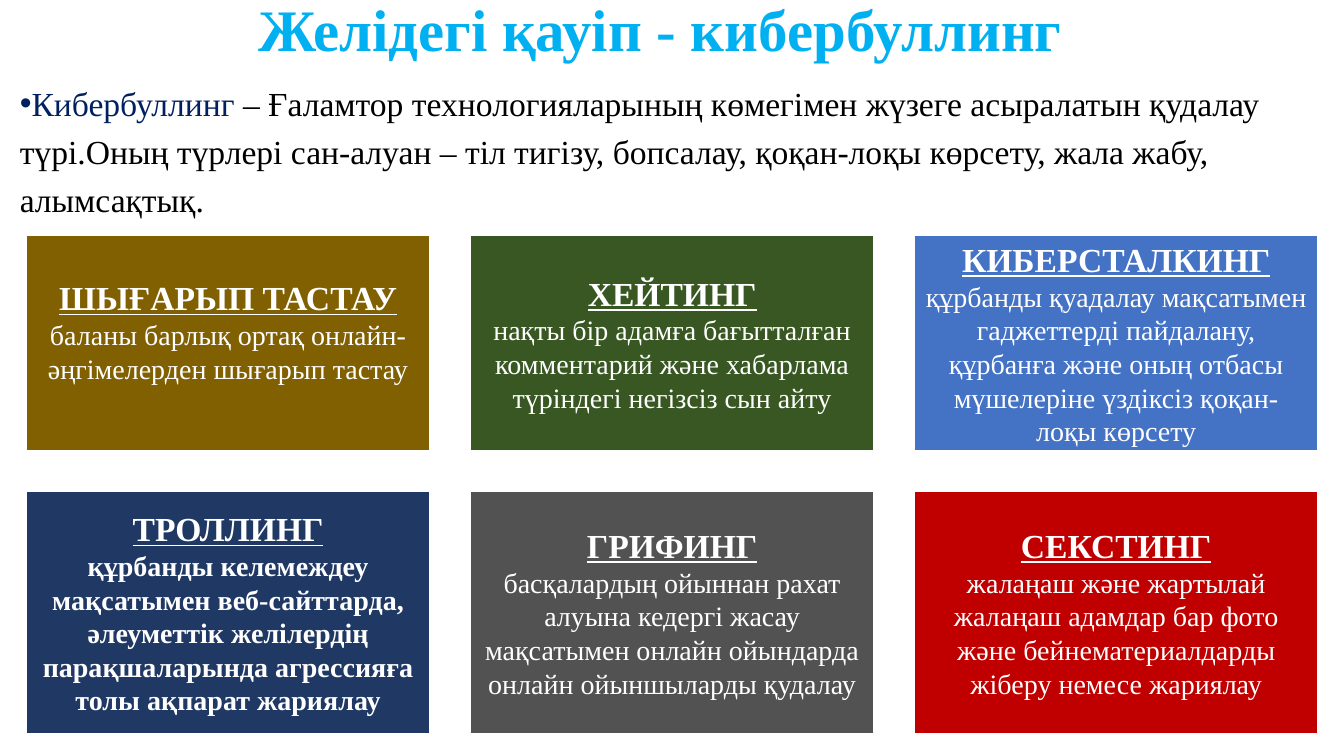
from dataclasses import dataclass

from lxml import etree
from pptx import Presentation
from pptx.dml.color import RGBColor
from pptx.enum import shapes, text
from pptx.oxml import ns
from pptx.util import Cm, Pt


@dataclass(frozen=True)
class Theme:
    font: str = "Times New Roman"
    heading: str = "00B0F0"
    term: str = "002060"
    body: str = "000000"
    white: str = "FFFFFF"
    heading_size: int = 42
    lead_size: int = 24
    card_size: int = 20


THEME = Theme()


def style(font, size, color, bold=False, underline=False):
    font.name = THEME.font
    font.size = Pt(size)
    font.bold = bold
    font.underline = underline
    font.color.rgb = RGBColor.from_string(color)


def set_insets(frame, inset):
    """Wrap the text inside equal margins on all four sides."""
    frame.word_wrap = True
    frame.margin_left = frame.margin_right = Cm(inset)
    frame.margin_top = frame.margin_bottom = Cm(inset)


prs = Presentation()
prs.slide_width, prs.slide_height = Cm(33.87), Cm(19.05)
slide = prs.slides.add_slide(prs.slide_layouts[5])

# Heading
title = slide.shapes.title
title.left, title.top, title.width, title.height = Cm(4.95), Cm(0.23), Cm(23.37), Cm(1.17)
title.text_frame.text = "Желідегі қауіп - кибербуллинг"
title.text_frame.auto_size = text.MSO_AUTO_SIZE.NONE
title.text_frame.vertical_anchor = text.MSO_ANCHOR.MIDDLE
heading = title.text_frame.paragraphs[0]
heading.alignment = text.PP_ALIGN.CENTER
heading.line_spacing = 0.9
style(heading.font, THEME.heading_size, THEME.heading, bold=True)

# Definition
definition = slide.shapes.add_textbox(Cm(0.25), Cm(1.75), Cm(33.6), Cm(2.16)).text_frame
set_insets(definition, 0.25)
definition.margin_top = Cm(0.13)
lead = definition.paragraphs[0]
lead.line_spacing = 1.2
for words, color in [
    ("Кибербуллинг", THEME.term),
    (" – Ғаламтор технологияларының көмегімен жүзеге асыралатын қудалау түрі."
     "Оның түрлері сан-алуан – тіл тигізу, бопсалау, қоқан-лоқы көрсету, "
     "жала жабу, алымсақтық.", THEME.body),
]:
    run = lead.add_run()
    run.text = words
    style(run.font, THEME.lead_size, color)
lead_properties = lead._p.get_or_add_pPr()
lead_properties.set("marL", "0")
lead_properties.set("indent", "0")
etree.SubElement(lead_properties, ns.qn("a:buFont"), typeface="Arial")
etree.SubElement(lead_properties, ns.qn("a:buChar"), char="•")

# Kinds of cyberbullying: fill, name, description, bold description, inset
kinds = [
    ("806000", "ШЫҒАРЫП ТАСТАУ",
     "баланы барлық ортақ онлайн-әңгімелерден шығарып тастау", False, 0.25),
    ("385723", "ХЕЙТИНГ",
     "нақты бір адамға бағытталған комментарий және хабарлама түріндегі "
     "негізсіз сын айту", False, 0.25),
    ("4472C4", "КИБЕРСТАЛКИНГ",
     "құрбанды қуадалау мақсатымен гаджеттерді пайдалану, құрбанға және оның "
     "отбасы мүшелеріне үздіксіз қоқан-лоқы көрсету", False, 0.25),
    ("203864", "ТРОЛЛИНГ",
     "құрбанды келемеждеу мақсатымен веб-сайттарда, әлеуметтік желілердің "
     "парақшаларында агрессияға толы ақпарат жариялау", True, 0.18),
    ("525252", "ГРИФИНГ",
     "басқалардың ойыннан рахат алуына кедергі жасау мақсатымен онлайн "
     "ойындарда онлайн ойыншыларды қудалау", False, 0.25),
    ("C00000", "СЕКСТИНГ",
     "жалаңаш және жартылай жалаңаш адамдар бар фото және бейнематериалдарды "
     "жіберу немесе жариялау", False, 0.25),
]
COLUMNS, GRID_LEFT, GRID_TOP, CARD_WIDTH, GAP = 3, 0.67, 5.94, 10.16, 1.03
ROW_HEIGHTS = [5.41, 6.1]

cards = []
for index, (fill, name, description, bold, inset) in enumerate(kinds):
    row, column = divmod(index, COLUMNS)
    card = slide.shapes.add_shape(
        shapes.MSO_SHAPE.RECTANGLE,
        Cm(GRID_LEFT + column * (CARD_WIDTH + GAP)),
        Cm(GRID_TOP + sum(ROW_HEIGHTS[:row]) + row * GAP),
        Cm(CARD_WIDTH), Cm(ROW_HEIGHTS[row]))
    card.shadow.inherit = False
    card.fill.solid()
    card.fill.fore_color.rgb = RGBColor.from_string(fill)
    card.line.color.rgb = RGBColor.from_string(THEME.white)
    card.line.width = Pt(1)
    frame = card.text_frame
    set_insets(frame, inset)
    frame.vertical_anchor = text.MSO_ANCHOR.MIDDLE
    frame.text = f"{name}\n{description}"
    name_line, description_line = frame.paragraphs
    name_line.alignment = description_line.alignment = text.PP_ALIGN.CENTER
    style(name_line.font, THEME.lead_size, THEME.white, bold=True, underline=True)
    style(description_line.font, THEME.card_size, THEME.white, bold=bold)
    cards.append(card)

# The short first card sits slightly above the middle
cards[0].text_frame.margin_bottom = Cm(0.86)

prs.save("out.pptx")
